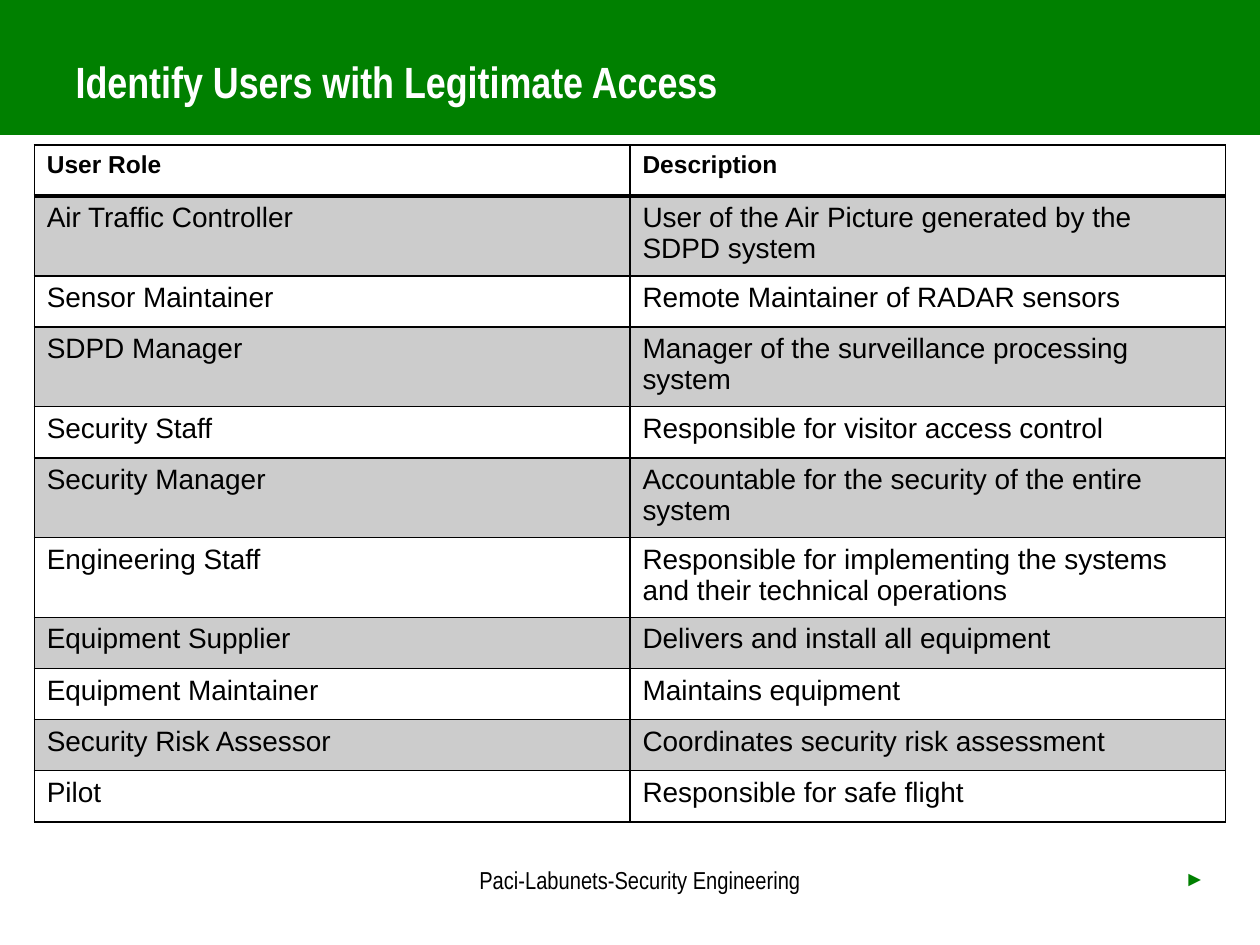
from lxml.etree import SubElement
from pptx import Presentation
from pptx.dml.color import RGBColor
from pptx.enum.shapes import MSO_SHAPE as Shape
from pptx.enum.text import MSO_ANCHOR as Anchor, PP_ALIGN as Align
from pptx.oxml.ns import qn
from pptx.util import Pt

GREEN, BLACK, WHITE = "008000", "000000", "FFFFFF"
ROWS = [
    ("User Role", "Description"),
    ("Air Traffic Controller", "User of the Air Picture generated by the SDPD system"),
    ("Sensor Maintainer", "Remote Maintainer of RADAR sensors"),
    ("SDPD Manager", "Manager of the surveillance processing system"),
    ("Security Staff", "Responsible for visitor access control"),
    ("Security Manager", "Accountable for the security of the entire system"),
    ("Engineering Staff",
     "Responsible for implementing the systems and their technical operations"),
    ("Equipment Supplier", "Delivers and install all equipment"),
    ("Equipment Maintainer", "Maintains equipment"),
    ("Security Risk Assessor", "Coordinates security risk assessment"),
    ("Pilot", "Responsible for safe flight"),
]
SHADED_ROWS = {1, 3, 5, 7, 9}


def color(value):
    return RGBColor.from_string(value)


def write(frame, text, size, font, fill, bold=False, align=Align.LEFT):
    para = frame.paragraphs[0]
    para.alignment = align
    span = para.add_run()
    span.text = text
    span.font.size = Pt(size)
    span.font.name = font
    span.font.bold = bold
    span.font.color.rgb = color(fill)


def add_title(page, text):
    title = page.shapes.title
    title.left, title.top, title.width, title.height = Pt(36), Pt(21.6), Pt(477.4), Pt(49.7)
    title.text_frame.vertical_anchor = Anchor.MIDDLE
    write(title.text_frame, text, 25, "Arial Narrow", WHITE, True)
    band = page.shapes.add_shape(Shape.RECTANGLE, Pt(0), Pt(-2), Pt(720), Pt(79.2))
    band.shadow.inherit = False
    band.fill.solid()
    band.fill.fore_color.rgb = color(GREEN)
    band.line.fill.background()
    title.element.addprevious(band.element)


def add_footer(page, text, left, width, size, fill, align, right_inset=7.2):
    box = page.shapes.add_textbox(Pt(left), Pt(491), Pt(width), Pt(36))
    frame = box.text_frame
    frame.word_wrap = True
    frame.margin_right = Pt(right_inset)
    write(frame, text, size, "Arial Narrow", fill, align=align)


def add_borders(cell, widths):
    props = cell._tc.get_or_add_tcPr()
    for side, width in widths.items():
        line = SubElement(props, qn(f"a:ln{side}"), w=str(Pt(width)))
        paint = SubElement(line, qn("a:solidFill"))
        SubElement(paint, qn("a:srgbClr"), val=BLACK)


def shade(cell):
    cell.fill.solid()
    cell.fill.fore_color.rgb = color(BLACK)
    tint = cell._tc.tcPr.find(f"{qn('a:solidFill')}/{qn('a:srgbClr')}")
    SubElement(tint, qn("a:alpha"), val="20000")


def add_role_table(page):
    row_height = 29.2
    frame = page.shapes.add_table(len(ROWS), 2, Pt(19.6), Pt(82.8),
                                  Pt(680.8), Pt(row_height * len(ROWS)))
    table = frame.table
    table.horz_banding = False
    for row in table.rows:
        row.height = Pt(row_height)
    for i, texts in enumerate(ROWS):
        header = i == 0
        for j, text in enumerate(texts):
            cell = table.cell(i, j)
            write(cell.text_frame, text, 14 if header else 16, "Arial", BLACK, header)
            add_borders(cell, {"L": 1, "R": 1, "T": 2 if i == 1 else 1,
                               "B": 2 if header else 1})
            if i in SHADED_ROWS:
                shade(cell)
            else:
                cell.fill.background()


def main():
    deck = Presentation()
    deck.slide_width, deck.slide_height = Pt(720), Pt(540)
    page = deck.slides.add_slide(deck.slide_layouts[5])
    add_title(page, "Identify Users with Legitimate Access")
    add_footer(page, "Paci-Labunets-Security Engineering", 190, 351.4, 14, BLACK, Align.CENTER)
    add_footer(page, "►", 626.4, 76.3, 12, GREEN, Align.RIGHT, 14)
    add_role_table(page)
    deck.save("out.pptx")


if __name__ == "__main__":
    main()
